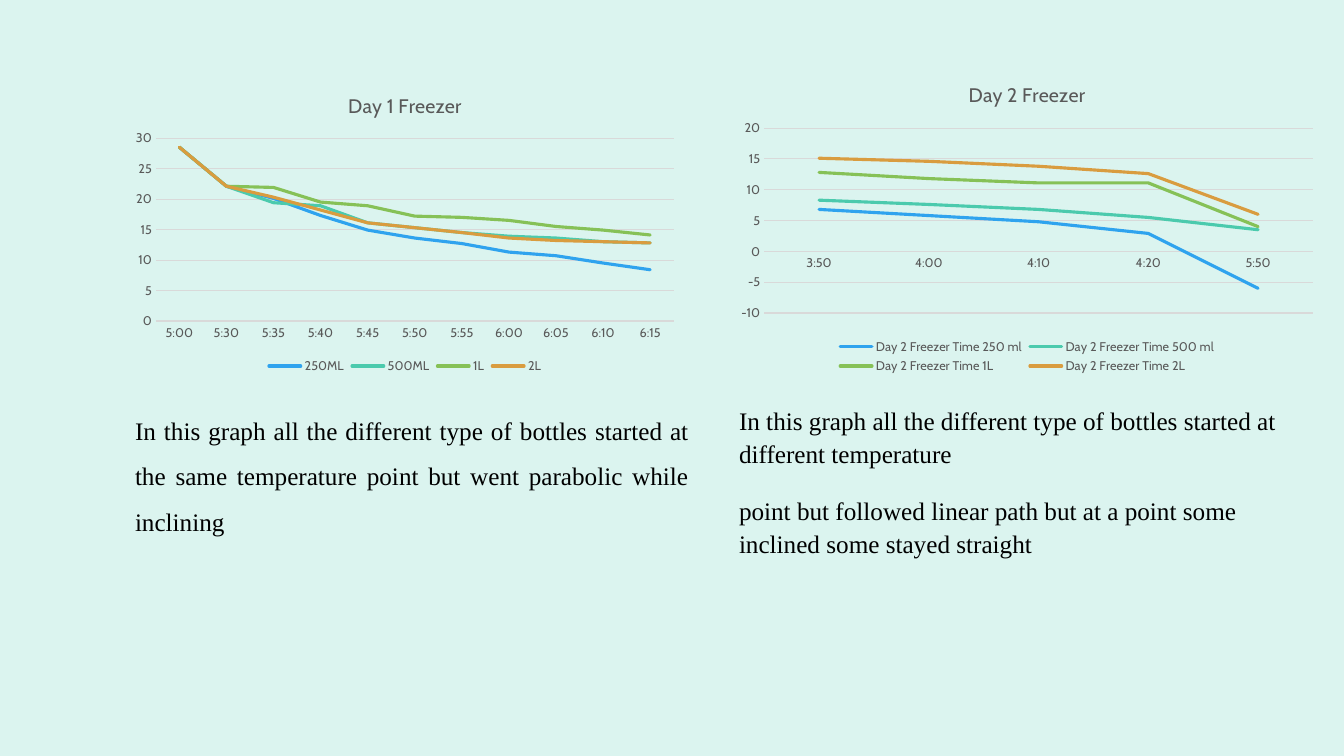
from lxml.etree import SubElement
from pptx import Presentation
from pptx.chart.data import CategoryChartData
from pptx.dml.color import RGBColor
from pptx.enum.chart import XL_CHART_TYPE as ChartType, XL_LEGEND_POSITION as LegendPosition
from pptx.enum.chart import XL_MARKER_STYLE as MarkerStyle, XL_TICK_MARK as TickMark
from pptx.enum.text import MSO_ANCHOR as Anchor, PP_ALIGN as Align
from pptx.oxml.ns import qn
from pptx.util import Pt

PX = 914400 / 100.8
MINT = RGBColor(0xDB, 0xF4, 0xEF)
BLACK = RGBColor(0, 0, 0)
GRAY = RGBColor(0x59, 0x59, 0x59)
GRID = RGBColor(0xD9, 0xD9, 0xD9)
BLUE = RGBColor(0x2F, 0xA3, 0xEE)
TEAL = RGBColor(0x4B, 0xCA, 0xAD)
GREEN = RGBColor(0x86, 0xC1, 0x57)
ORANGE = RGBColor(0xD9, 0x9C, 0x3F)
LINE_COLORS = (BLUE, TEAL, GREEN, ORANGE)

DAY_1_TIMES = "5:00 5:30 5:35 5:40 5:45 5:50 5:55 6:00 6:05 6:10 6:15".split()
DAY_1 = {
    "250ML": (28.5, 22.1, 20.1, 17.3, 14.9, 13.6, 12.7, 11.3, 10.7, 9.5, 8.4),
    "500ML": (28.5, 22.1, 19.4, 18.9, 16.1, 15.3, 14.5, 13.9, 13.6, 13, 12.8),
    "1L": (28.5, 22.1, 21.9, 19.5, 18.9, 17.2, 17, 16.5, 15.5, 14.9, 14.1),
    "2L": (28.5, 22.1, 20.3, 18.2, 16.1, 15.3, 14.5, 13.6, 13.2, 13, 12.8),
}
DAY_2_TIMES = "3:50 4:00 4:10 4:20 5:50".split()
DAY_2 = {
    "Day 2 Freezer Time 250 ml": (6.8, 5.8, 4.8, 2.9, -6),
    "Day 2 Freezer Time 500 ml": (8.3, 7.6, 6.8, 5.5, 3.5),
    "Day 2 Freezer Time 1L": (12.8, 11.8, 11.1, 11.1, 4),
    "Day 2 Freezer Time 2L": (15.1, 14.6, 13.8, 12.6, 6),
}
DAY_1_NOTE = [
    "In this graph all the different type of bottles started at the same "
    "temperature point but went parabolic while inclining"
]
DAY_2_NOTE = [
    "In this graph all the different type of bottles started at different temperature",
    "point but followed linear path but at a point some inclined some stayed straight",
]


def px(length):
    return round(length * PX)


def day_fraction(time):
    hours, minutes = map(int, time.split(":"))
    return (hours * 60 + minutes) / 1440


def style_font(font, size, color, name="Cabin"):
    font.size, font.name, font.bold = Pt(size), name, False
    font.color.rgb = color


def place_plot(chart, box, plot):
    area = chart.element.find(".//" + qn("c:plotArea"))
    layout = area.find(qn("c:layout"))
    if layout is None:
        layout = SubElement(area, qn("c:layout"))
        area.insert(0, layout)
    manual = SubElement(layout, qn("c:manualLayout"))
    left, top, width, height = box
    fractions = ((plot[0] - left) / width, (plot[1] - top) / height,
                 plot[2] / width, plot[3] / height)
    settings = [("layoutTarget", "inner"), ("xMode", "edge"), ("yMode", "edge")]
    settings += zip("xywh", (f"{value:.3f}" for value in fractions))
    for tag, value in settings:
        SubElement(manual, qn("c:" + tag)).set("val", value)


def add_freezer_chart(page, box, plot, title, times, readings, limits):
    data = CategoryChartData()
    data.categories = [day_fraction(time) for time in times]
    data.categories.number_format = "h:mm"
    for name, values in readings.items():
        data.add_series(name, values)
    chart = page.shapes.add_chart(ChartType.LINE, *map(px, box), data).chart
    style_font(chart.font, 9, GRAY)
    chart.has_title = True
    heading = chart.chart_title.text_frame
    heading.text = title
    style_font(heading.paragraphs[0].font, 14, GRAY)
    chart.has_legend = True
    chart.legend.position = LegendPosition.BOTTOM
    chart.legend.include_in_layout = False
    style_font(chart.legend.font, 9, GRAY)

    for axis in (chart.category_axis, chart.value_axis):
        axis.major_tick_mark = axis.minor_tick_mark = TickMark.NONE
        style_font(axis.tick_labels.font, 9, GRAY)
    time_axis, degree_axis = chart.category_axis, chart.value_axis
    time_axis.tick_labels.number_format = "h:mm"
    time_axis.tick_labels.number_format_is_linked = False
    degree_axis.minimum_scale, degree_axis.maximum_scale = limits
    degree_axis.major_unit = 5
    degree_axis.format.line.fill.background()
    for line in (time_axis.format.line, degree_axis.major_gridlines.format.line):
        line.color.rgb = GRID
        line.width = Pt(0.75)

    chart.plots[0].vary_by_categories = False
    for series, color in zip(chart.plots[0].series, LINE_COLORS):
        series.smooth = False
        series.marker.style = MarkerStyle.NONE
        series.format.line.color.rgb = color
        series.format.line.width = Pt(2.25)
        series.format.line._get_or_add_ln().set("cap", "rnd")
    place_plot(chart, box, plot)


def add_note(page, box, texts, align, spacing, gap, top_inset=5, right_inset=10):
    frame = page.shapes.add_textbox(*map(px, box)).text_frame
    frame.word_wrap = True
    frame.vertical_anchor = Anchor.TOP
    frame.margin_left, frame.margin_right = px(10), px(right_inset)
    frame.margin_top, frame.margin_bottom = px(top_inset), px(5)
    for index, text in enumerate(texts):
        para = frame.add_paragraph() if index else frame.paragraphs[0]
        para.text = text
        para.alignment = align
        para.line_spacing = spacing
        para.space_after = Pt(gap)
        style_font(para.font, 18, BLACK, "Times New Roman")


def build_freezer_slide(deck):
    page = deck.slides.add_slide(deck.slide_layouts[6])
    page.background.fill.solid()
    page.background.fill.fore_color.rgb = MINT
    add_freezer_chart(page, (125, 77, 560, 301), (156, 138, 518, 183),
                      "Day 1 Freezer", DAY_1_TIMES, DAY_1, (0, 30))
    add_freezer_chart(page, (729, 66, 596, 312), (764, 128, 549, 185),
                      "Day 2 Freezer", DAY_2_TIMES, DAY_2, (-10, 20))
    add_note(page, (125, 355, 672, 179), DAY_1_NOTE, Align.JUSTIFY, 1.5, 10.3,
             top_inset=45, right_inset=108)
    add_note(page, (729, 398, 560, 162), DAY_2_NOTE, Align.LEFT, 1.08, 17.8)


def main():
    deck = Presentation()
    deck.slide_width, deck.slide_height = px(1344), px(756)
    build_freezer_slide(deck)
    deck.save("out.pptx")


if __name__ == "__main__":
    main()
